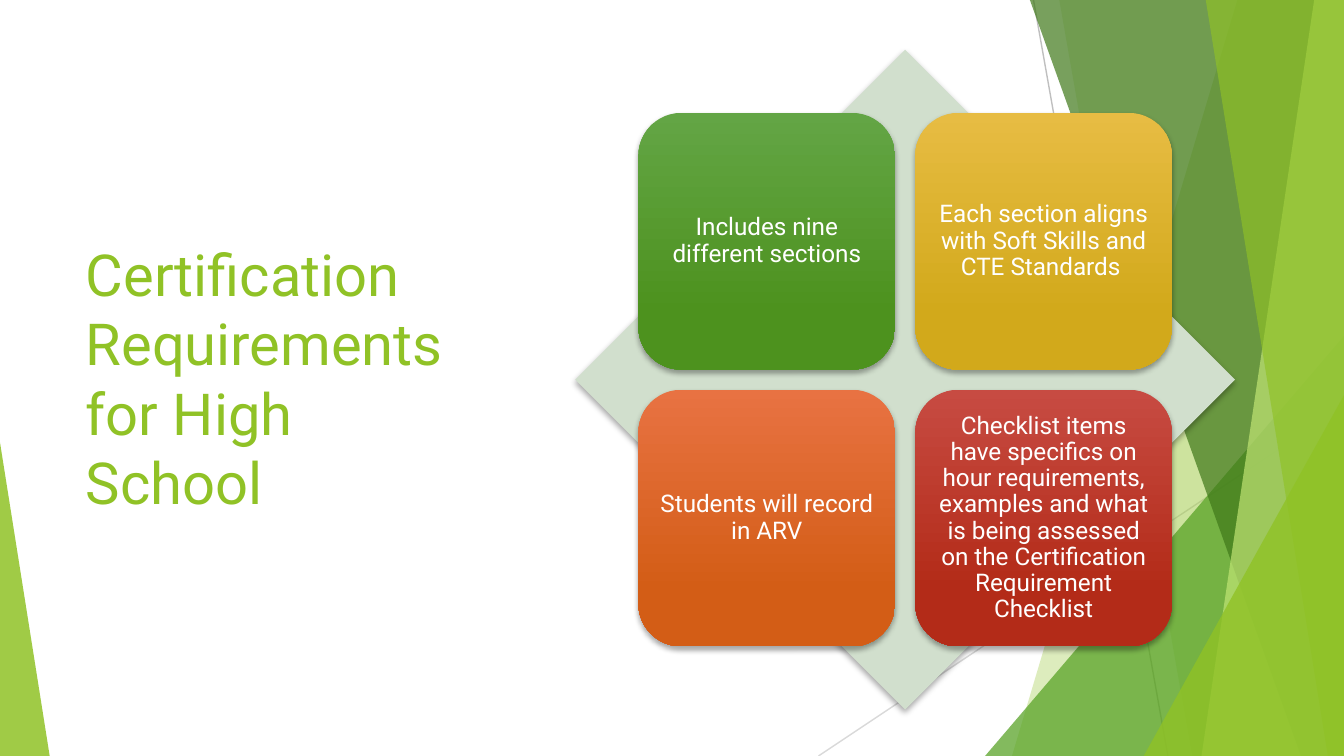
from lxml import etree
from pptx import Presentation
from pptx.dml.color import RGBColor
from pptx.enum.shapes import MSO_CONNECTOR, MSO_SHAPE
from pptx.enum.text import MSO_ANCHOR, PP_ALIGN
from pptx.oxml.ns import qn
from pptx.util import Inches, Pt

TRIANGLE, DIAMOND = MSO_SHAPE.ISOSCELES_TRIANGLE, MSO_SHAPE.DIAMOND
ROUNDED = MSO_SHAPE.ROUNDED_RECTANGLE
STRAIGHT = MSO_CONNECTOR.STRAIGHT
MIDDLE, LEFT, CENTER = MSO_ANCHOR.MIDDLE, PP_ALIGN.LEFT, PP_ALIGN.CENTER

WHITE = RGBColor(0xFF, 0xFF, 0xFF)
LIME = RGBColor(0x90, 0xC2, 0x26)
PALE_LIME = RGBColor(0xC0, 0xE4, 0x74)
GREEN = RGBColor(0x54, 0xA0, 0x21)
DARK_GREEN = RGBColor(0x3F, 0x78, 0x19)
SAGE = RGBColor(0xD1, 0xDF, 0xCD)
GRAY = RGBColor(0xBF, 0xBF, 0xBF)
LIGHT_GRAY = RGBColor(0xD9, 0xD9, 0xD9)

# Widescreen slide, 16:9
WIDTH = 10
HEIGHT = WIDTH * 9 / 16
FONT = "Roboto"

# Content: card text with gradient top and bottom, in reading order
TITLE = "Certification Requirements for High School"
CARDS = [
    ("Includes nine different sections",
     RGBColor(0x63, 0xA5, 0x45), RGBColor(0x4D, 0x92, 0x1E)),
    ("Each section aligns with Soft Skills and CTE Standards ",
     RGBColor(0xE7, 0xBC, 0x43), RGBColor(0xD2, 0xA9, 0x1B)),
    ("Students will record in ARV",
     RGBColor(0xE8, 0x72, 0x42), RGBColor(0xD3, 0x5D, 0x16)),
    ("Checklist items have specifics on hour requirements, examples and what "
     "is being assessed on the Certification Requirement Checklist",
     RGBColor(0xC7, 0x4B, 0x42), RGBColor(0xB3, 0x2B, 0x18)),
]

# Backdrop: lines as (start, end, colour)
LINES = [
    ((7.69, 0), (8.69, HEIGHT), GRAY),
    ((WIDTH, 3.02), (6.09, HEIGHT), LIGHT_GRAY),
]
# Bands reach the right edge: ("band", top x, bottom x, colour, opacity %)
# Triangles stand on the bottom edge: ("triangle", left, top, width, apex, colour, opacity %)
BACKDROP = [
    ("band", 9.21, 7.53, LIME, 30),
    ("band", 7.88, 8.87, LIME, 20),
    ("triangle", 7.33, 2.5, 2.67, 1, GREEN, 72),
    ("band", 7.66, 9.68, DARK_GREEN, 70),
    ("band", 9.78, 8.94, PALE_LIME, 70),
    ("band", 8.97, 9.88, LIME, 65),
    ("triangle", 8.51, 2.94, 1.49, 1, LIME, 80),
    ("triangle", 0, 3.29, 0.37, 0, LIME, 85),
]
BAND_TOP = -0.01

# Card grid, centred on the diamond
DIAMOND_LEFT, DIAMOND_TOP, DIAMOND_SIZE = 4.28, 0.37, 4.91
CARD_SIZE, CARD_GAP, CARD_PADDING = 1.91, 0.15, 0.09
GRID_OFFSET = (DIAMOND_SIZE - 2 * CARD_SIZE - CARD_GAP) / 2

presentation = Presentation()
presentation.slide_width, presentation.slide_height = Inches(WIDTH), Inches(HEIGHT)
slide = presentation.slides.add_slide(presentation.slide_layouts[6])
shapes = slide.shapes


def add_preset(kind, left, top, width, height):
    shape = shapes.add_shape(kind, *map(Inches, (left, top, width, height)))
    shape.line.fill.background()
    shape.shadow.inherit = False
    return shape


def add_band(top_x, bottom_x):
    corners = [(top_x, BAND_TOP), (WIDTH, BAND_TOP), (WIDTH, HEIGHT), (bottom_x, HEIGHT)]
    points = [(Inches(x), Inches(y)) for x, y in corners]
    builder = shapes.build_freeform(*points[0], scale=1.0)
    builder.add_line_segments(points[1:], close=True)
    shape = builder.convert_to_shape()
    shape.line.fill.background()
    shape.shadow.inherit = False
    return shape


def add_triangle(left, top, width, apex):
    shape = add_preset(TRIANGLE, left, top, width, HEIGHT - top)
    shape.adjustments[0] = apex
    return shape


def set_fill(shape, color, opacity=100):
    shape.fill.solid()
    shape.fill.fore_color.rgb = color
    if opacity < 100:
        color_element = shape.element.spPr.find(qn("a:solidFill"))[0]
        etree.SubElement(color_element, qn("a:alpha"), val=str(opacity * 1000))


def add_shadow(shape):
    effects = shape.element.spPr.find(qn("a:effectLst"))
    shadow = etree.SubElement(effects, qn("a:outerShdw"), blurRad=str(Pt(3)),
                              dist=str(Pt(2)), dir="5400000", rotWithShape="0")
    color = etree.SubElement(shadow, qn("a:srgbClr"), val="000000")
    etree.SubElement(color, qn("a:alpha"), val="35000")


def add_text(text, box, size, color, alignment, spacing, margins):
    text_box = shapes.add_textbox(*map(Inches, box))
    frame = text_box.text_frame
    frame_format = {"word_wrap": True, "vertical_anchor": MIDDLE}
    for side, margin in zip(("left", "top", "right", "bottom"), margins):
        frame_format["margin_" + side] = Inches(margin)
    paragraph = frame.paragraphs[0]
    run = paragraph.add_run()
    run.text = text
    run.font.color.rgb = color
    for target, values in (
        (frame, frame_format),
        (paragraph, {"alignment": alignment, "line_spacing": spacing}),
        (run.font, {"name": FONT, "size": Pt(size)}),
    ):
        for name, value in values.items():
            setattr(target, name, value)


# Backdrop lines
for start, end, color in LINES:
    connector = shapes.add_connector(STRAIGHT, *map(Inches, start + end))
    connector.line.color.rgb = color
    connector.line.width = Pt(0.75)
    etree.SubElement(connector.element.spPr, qn("a:effectLst"))

# Backdrop facets
BUILDERS = {"band": add_band, "triangle": add_triangle}
for kind, *geometry, color, opacity in BACKDROP:
    set_fill(BUILDERS[kind](*geometry), color, opacity)

# Title
add_text(TITLE, (0.54, 1.13, 2.91, 3.36), 31, LIME, LEFT, 1.0, (0.1, 0.05, 0.1, 0.05))

# Diamond behind the cards
diamond = add_preset(DIAMOND, DIAMOND_LEFT, DIAMOND_TOP, DIAMOND_SIZE, DIAMOND_SIZE)
set_fill(diamond, SAGE)
add_shadow(diamond)

# Cards, two by two
for index, (text, top_color, bottom_color) in enumerate(CARDS):
    row, column = divmod(index, 2)
    left = DIAMOND_LEFT + GRID_OFFSET + column * (CARD_SIZE + CARD_GAP)
    top = DIAMOND_TOP + GRID_OFFSET + row * (CARD_SIZE + CARD_GAP)
    card = add_preset(ROUNDED, left, top, CARD_SIZE, CARD_SIZE)
    card.fill.gradient()
    card.fill.gradient_angle = 270
    stops = zip(card.fill.gradient_stops, (0, 0.78), (top_color, bottom_color))
    for stop, position, color in stops:
        stop.position = position
        stop.color.rgb = color
    add_shadow(card)
    text_size = CARD_SIZE - 2 * CARD_PADDING
    box = (left + CARD_PADDING, top + CARD_PADDING, text_size, text_size)
    add_text(text, box, 13, WHITE, CENTER, 0.9, (0.05,) * 4)

presentation.save("out.pptx")
